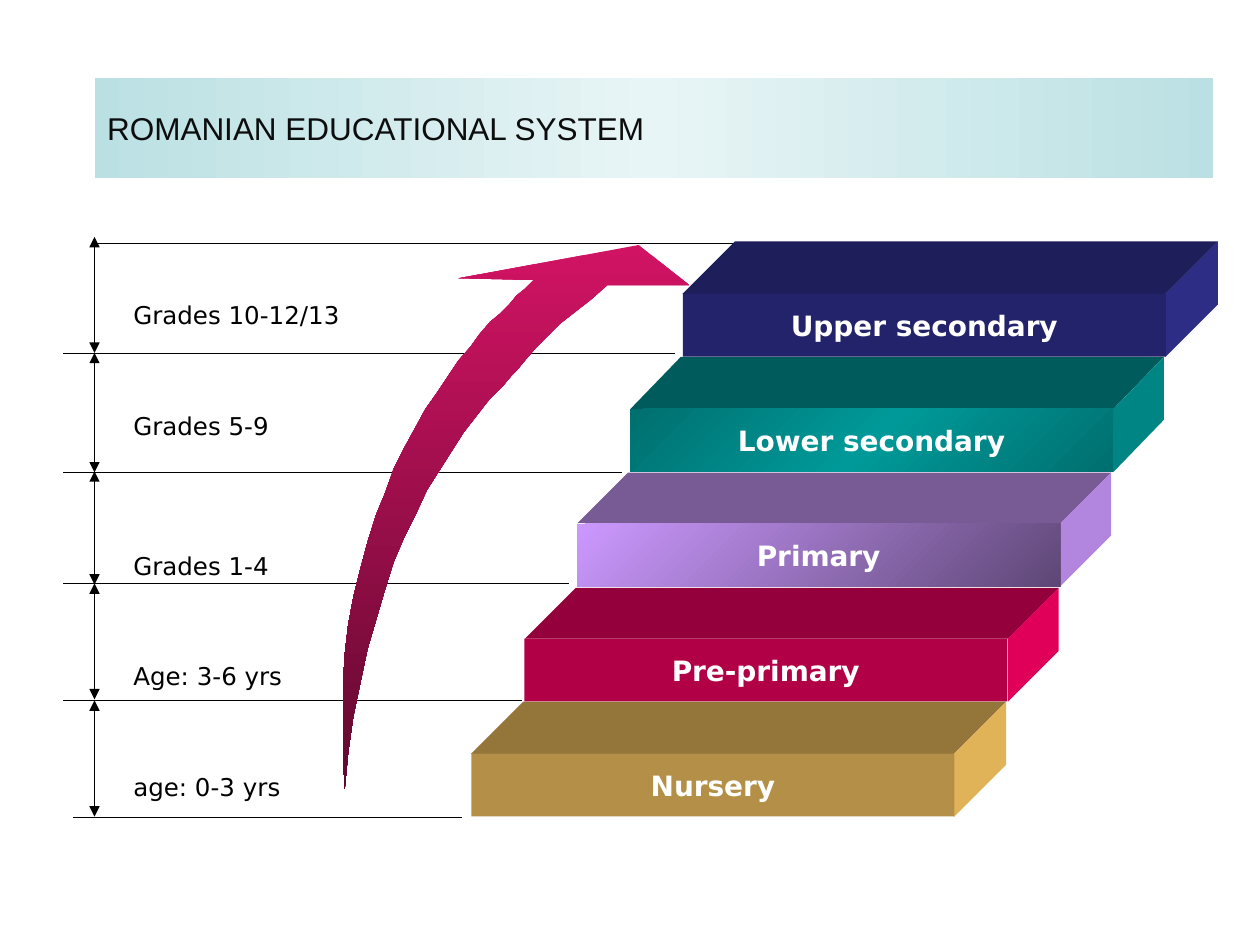
from copy import deepcopy

from lxml import etree
from pptx import Presentation
from pptx.dml.color import RGBColor
from pptx.enum import shapes, text
from pptx.oxml.ns import qn
from pptx.util import Pt

TITLE = "ROMANIAN EDUCATIONAL SYSTEM"
COLOURS = {"ink": "000000", "title": "0D0D0D", "white": "FFFFFF"}
BAND = ["BBE0E3", "E8F5F6", "BBE0E3"]
SWOOSH = ["D11364", "61092E"]

# From the top step down: name, front colours, top colour, side colour
STEPS = [
    ("Upper secondary", ["23236B"], "1E1E5A", "2D2D86"),
    ("Lower secondary", ["006F6F", "009999", "006F6F"], "005C5C", "008585"),
    ("Primary", ["CC99FF", "5E4776"], "785A94", "B285DF"),
    ("Pre-primary", ["B20047"], "94003B", "E00059"),
    ("Nursery", ["B38F47"], "94763B", "E0B359"),
]
STEP_LEFT, STEP_TOP, STEP_WIDTH, STEP_HEIGHT = 390.2, 167.8, 276, 36
SHIFT, RISE, DEPTH = 30.2, 65.7, 29.3

# Label and its top
AGES = [
    ("Grades 10-12/13", 167.8),
    ("Grades 5-9", 231.1),
    ("Grades 1-4", 311.3),
    ("Age: 3-6 yrs", 374.4),
    ("age: 0-3 yrs", 437.8),
]
# Left, right and height of each divider
DIVIDERS = [
    (54, 432, 139), (36, 385.9, 202.1), (36, 355.7, 270),
    (36, 325.4, 333.4), (36, 298.1, 400.3), (41.8, 264.2, 467.3),
]
AXIS_X = 54
SPANS = [(135.4, 201.6), (201.6, 270), (269.3, 334.1), (333.4, 399.6), (400.3, 466.6)]

ARROW = [
    (197.3, 451.4), (195.8, 431.3), (195.8, 411.1), (195.8, 392.4), (197.3, 374.4),
    (199.4, 357.1), (202.3, 340.6), (205.9, 324.7), (210.2, 309.6), (215.3, 294.5),
    (220.3, 281.5), (225.4, 267.8), (231.1, 256.3), (236.9, 244.8), (243.4, 234),
    (249.8, 223.9), (256.3, 214.6), (262.1, 205.9), (268.6, 198), (274.3, 190.8),
    (280.1, 184.3), (285.8, 178.6), (290.9, 173.5), (295.2, 169.2), (299.5, 164.9),
    (305.3, 159.8), (262.1, 159.1), (365, 139.7), (393.8, 163.4), (347, 163.4),
    (338.4, 170.6), (329, 177.8), (320.4, 185), (313.2, 192.2), (306, 199.4),
    (300.2, 205.9), (295.2, 211.7), (291.6, 215.3), (286.6, 221), (279.4, 229),
    (272.2, 237.6), (265, 247), (257.8, 257.8), (251.3, 268.6), (244.1, 280.1),
    (237.6, 293), (231.1, 306.7), (225.4, 321.1), (219.6, 337), (214.6, 353.5),
    (210.2, 370.8), (205.9, 389.5), (202.3, 409), (199.4, 429.8),
]


def paint(shape, colours, angle=0):
    """Fill with one colour, or with evenly spaced stops at a clockwise angle."""
    fill = shape.fill
    if len(colours) == 1:
        fill.solid()
        fill.fore_color.rgb = RGBColor.from_string(colours[0])
        return
    fill.gradient()
    fill.gradient_angle = -angle % 360
    stop_list = shape._element.spPr.find(".//" + qn("a:gsLst"))
    for _ in colours[2:]:
        stop_list.append(deepcopy(stop_list[0]))
    for i, (stop, colour) in enumerate(zip(fill.gradient_stops, colours)):
        stop.position = i / (len(colours) - 1)
        stop.color.rgb = RGBColor.from_string(colour)


def write(shape, words, colour, align, frame_format, font_format):
    frame = shape.text_frame
    for name, value in frame_format.items():
        setattr(frame, name, value)
    paragraph = frame.paragraphs[0]
    paragraph.alignment = align
    run = paragraph.add_run()
    run.text = words
    for name, value in font_format.items():
        setattr(run.font, name, value)
    run.font.color.rgb = RGBColor.from_string(COLOURS[colour])


def add_outline(slide, points, colours, angle=0):
    builder = slide.shapes.build_freeform(*points[0], scale=Pt(1))
    builder.add_line_segments(points[1:], close=True)
    outline = builder.convert_to_shape()
    outline.shadow.inherit = False
    outline.line.fill.background()
    paint(outline, colours, angle)


def add_line(slide, x1, y1, x2, y2, arrows=False):
    line = slide.shapes.add_connector(
        shapes.MSO_CONNECTOR.STRAIGHT, Pt(x1), Pt(y1), Pt(x2), Pt(y2))
    line.line.width = Pt(0.75)
    line.line.color.rgb = RGBColor.from_string(COLOURS["ink"])
    if arrows:
        for end in ("a:headEnd", "a:tailEnd"):
            etree.SubElement(line.line._get_or_add_ln(), qn(end), type="triangle")
    etree.SubElement(line._element.spPr, qn("a:effectLst"))


def add_title(slide):
    title = slide.shapes.title
    box = {"left": 54, "top": 44.6, "width": 639.4, "height": 56.9}
    for name, value in box.items():
        setattr(title, name, Pt(value))
    paint(title, BAND)
    write(title, TITLE, "title", text.PP_ALIGN.LEFT,
          {"vertical_anchor": text.MSO_ANCHOR.MIDDLE, "word_wrap": True},
          {"name": "Arial", "size": Pt(18)})


def add_step(slide, index, name, front_colours, top_colour, side_colour):
    left, top = STEP_LEFT - SHIFT * index, STEP_TOP + RISE * index
    right, bottom = left + STEP_WIDTH, top + STEP_HEIGHT
    back_right, back_top = right + DEPTH, top - DEPTH
    add_outline(slide, [(left, top), (left + DEPTH, back_top),
                        (back_right, back_top), (right, top)], [top_colour])
    add_outline(slide, [(right, top), (back_right, back_top),
                        (back_right, bottom - DEPTH), (right, bottom)], [side_colour])
    front = slide.shapes.add_shape(
        shapes.MSO_SHAPE.RECTANGLE, Pt(left), Pt(top), Pt(STEP_WIDTH), Pt(STEP_HEIGHT))
    front.shadow.inherit = False
    front.line.fill.background()
    paint(front, front_colours, 45)
    write(front, name, "white", text.PP_ALIGN.CENTER,
          {"vertical_anchor": text.MSO_ANCHOR.MIDDLE, "word_wrap": False},
          {"name": "DejaVu Sans", "size": Pt(16), "bold": True})


def main():
    deck = Presentation()
    deck.slide_width, deck.slide_height = Pt(720), Pt(540)
    slide = deck.slides.add_slide(deck.slide_layouts[5])
    add_title(slide)
    for left, right, y in DIVIDERS:
        add_line(slide, left, y, right, y)
    for top, bottom in SPANS:
        add_line(slide, AXIS_X, top, AXIS_X, bottom, arrows=True)
    for label, top in AGES:
        box = slide.shapes.add_textbox(Pt(69.1), Pt(top), Pt(136), Pt(24.5))
        write(box, label, "ink", text.PP_ALIGN.LEFT, {"word_wrap": False},
              {"name": "DejaVu Sans", "size": Pt(14)})
    add_outline(slide, ARROW, SWOOSH, 90)
    for index, step in reversed(list(enumerate(STEPS))):
        add_step(slide, index, *step)
    deck.save("out.pptx")


if __name__ == "__main__":
    main()
